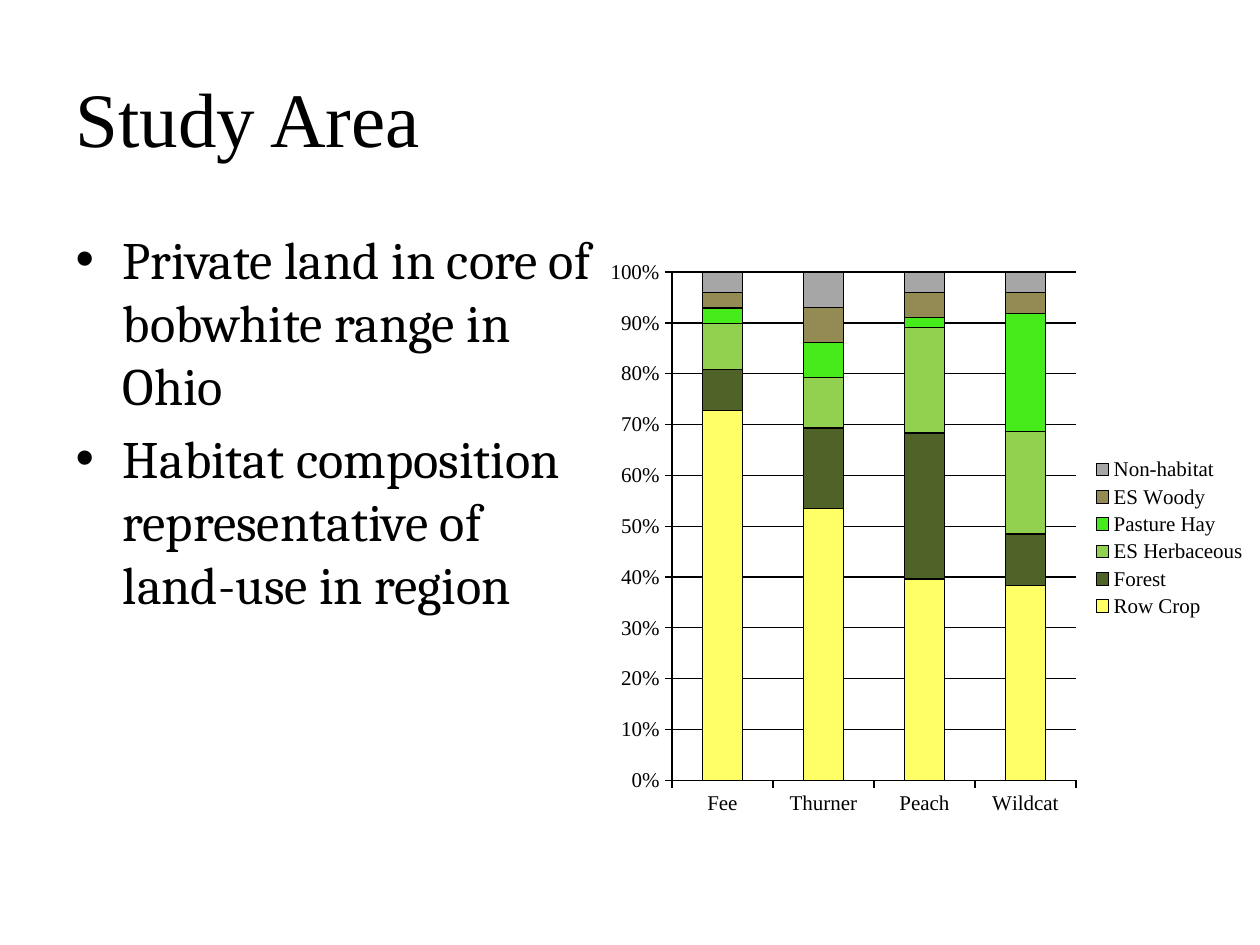
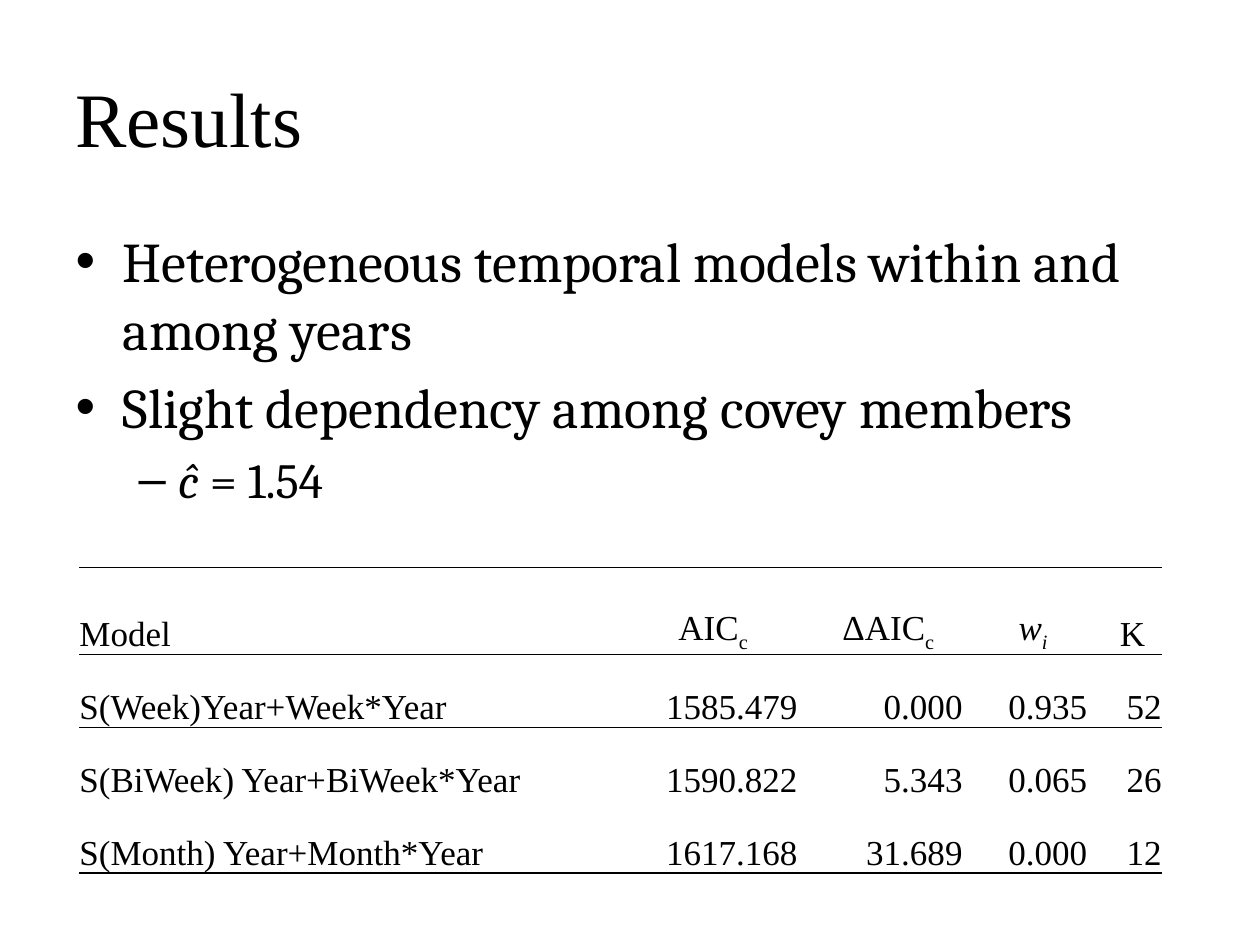
"""Build the study area and results slides."""
from typing import Any, NamedTuple

from lxml import etree
from pptx import Presentation
from pptx.chart.data import CategoryChartData
from pptx.dml.color import RGBColor
from pptx.enum.chart import XL_CHART_TYPE, XL_LEGEND_POSITION, XL_TICK_MARK
from pptx.enum.text import MSO_ANCHOR, MSO_AUTO_SIZE, PP_ALIGN
from pptx.oxml.ns import qn
from pptx.util import Pt

STACKED = XL_CHART_TYPE.COLUMN_STACKED_100
RIGHT_KEY = XL_LEGEND_POSITION.RIGHT
OUTSIDE = XL_TICK_MARK.OUTSIDE
BOTTOM, MIDDLE = MSO_ANCHOR.BOTTOM, MSO_ANCHOR.MIDDLE
NO_FIT = MSO_AUTO_SIZE.NONE
LEFT, CENTER, RIGHT = PP_ALIGN.LEFT, PP_ALIGN.CENTER, PP_ALIGN.RIGHT

SCALE = 9144
SERIF, BODY = "Times New Roman", "Cambria"
COLORS = {
    "ink": "000000",
    "crop": "FFFF66",
    "forest": "4F6228",
    "herb": "92D050",
    "hay": "47EA1A",
    "wood": "948A54",
    "none": "A6A6A6",
}
PLAIN_GRID = "{2D5ABB26-0587-4C30-8999-92F81FD0307C}"


class Box(NamedTuple):
    """A place on the slide in px, 100 to the inch."""
    left: int
    top: int
    width: int
    height: int


class Bit(NamedTuple):
    """A stretch of text with one look."""
    text: str
    slant: bool = False
    sub: bool = False


class Item(NamedTuple):
    """One list entry."""
    bits: list[Bit]
    size: int
    level: int = 0


class Land(NamedTuple):
    """One land cover series."""
    name: str
    color: str
    shares: list[int]


TITLE_BOX = Box(50, 30, 900, 125)
CHART_BOX = Box(474, 198, 526, 458)
TABLE_BOX = Box(63, 450, 859, 243)

SITES = ["Fee", "Thurner", "Peach", "Wildcat"]
LANDS = [
    Land("Row Crop", "crop", [72, 54, 40, 38]),
    Land("Forest", "forest", [8, 16, 29, 10]),
    Land("ES Herbaceous", "herb", [9, 10, 21, 20]),
    Land("Pasture Hay", "hay", [3, 7, 2, 23]),
    Land("ES Woody", "wood", [3, 7, 5, 4]),
    Land("Non-habitat", "none", [4, 7, 4, 4]),
]

GAP = 13
WIDTHS = [423, 134, 118, 86, 46]
HEIGHTS = [69, 58, 58, 58]
HEADS = [
    [Bit("Model")],
    [Bit("AIC"), Bit("c", sub=True)],
    [Bit("ΔAIC"), Bit("c", sub=True)],
    [Bit("w", slant=True), Bit("i", slant=True, sub=True)],
    [Bit("K")],
]
MODELS = [
    ["S(Week)Year+Week*Year", "1585.479", "0.000", "0.935", "52"],
    ["S(BiWeek) Year+BiWeek*Year", "1590.822", "5.343", "0.065", "26"],
    ["S(Month) Year+Month*Year", "1617.168", "31.689", "0.000", "12"],
]
RULES = [{"T": 0.5, "B": 0.5}, {"T": 0.5}, {}, {"B": 1}]


def emu(px: int) -> int:
    """Turn px into EMU."""
    return px * SCALE


def tint(key: str) -> RGBColor:
    """Look up a colour."""
    return RGBColor.from_string(COLORS[key])


def apply(target: Any, values: dict[str, Any]) -> None:
    """Set each named value on the target."""
    for name, value in values.items():
        setattr(target, name, value)


def place(shape: Any, box: Box) -> None:
    """Move a shape to a box."""
    apply(shape, {name: emu(px) for name, px in box._asdict().items()})


def ink(line: Any) -> None:
    """Draw a line thin and black."""
    line.color.rgb = tint("ink")
    line.width = Pt(0.75)


def write(para: Any, bits: list[Bit], face: str, size: int) -> None:
    """Fill a paragraph with styled runs."""
    for bit in bits:
        run = para.add_run()
        run.text = bit.text
        apply(run.font, {"name": face, "size": Pt(size), "italic": bit.slant})
        run.font.color.rgb = tint("ink")
        if bit.sub:
            run._r.get_or_add_rPr().set("baseline", "-25000")


def add_page(deck: Any, title: str, width: int, items: list[Item]) -> Any:
    """Add a slide with its title and list."""
    slide = deck.slides.add_slide(deck.slide_layouts[1])
    head, body = slide.placeholders
    place(head, TITLE_BOX)
    apply(head.text_frame, {"vertical_anchor": MIDDLE, "auto_size": NO_FIT})
    para = head.text_frame.paragraphs[0]
    para.alignment = LEFT
    write(para, [Bit(title)], SERIF, 44)

    place(body, Box(50, 175, width, 495))
    frame = body.text_frame
    frame.auto_size = NO_FIT
    for num, item in enumerate(items):
        para = frame.add_paragraph() if num else frame.paragraphs[0]
        para.level = item.level
        if not num:
            para.space_before = Pt(0)
        write(para, item.bits, BODY, item.size)
    return slide


def add_lands(slide: Any) -> None:
    """Chart the land cover of each site."""
    data = CategoryChartData()
    data.categories = SITES
    for land in LANDS:
        data.add_series(land.name, land.shares)
    spot = [emu(px) for px in CHART_BOX]
    chart = slide.shapes.add_chart(STACKED, *spot, data).chart
    apply(chart, {"has_title": False, "has_legend": True})
    apply(chart.legend, {"position": RIGHT_KEY, "include_in_layout": False})
    apply(chart.font, {"name": SERIF, "size": Pt(12)})
    chart.font.color.rgb = tint("ink")

    for axis in (chart.category_axis, chart.value_axis):
        axis.major_tick_mark = OUTSIDE
        ink(axis.format.line)
    scale = chart.value_axis
    apply(scale, {"minimum_scale": 0, "maximum_scale": 1,
                  "major_unit": 0.1, "has_major_gridlines": True})
    apply(scale.tick_labels, {"number_format": "0%",
                              "number_format_is_linked": False})
    ink(scale.major_gridlines.format.line)

    plot = chart.plots[0]
    apply(plot, {"gap_width": 150, "overlap": 100})
    for land, series in zip(LANDS, plot.series):
        series.format.fill.solid()
        series.format.fill.fore_color.rgb = tint(land.color)
        ink(series.format.line)


def rule(cell: Any, lines: dict[str, float]) -> None:
    """Draw the cell's top and bottom rules."""
    props = cell._tc.get_or_add_tcPr()
    for spot, (side, width) in enumerate(lines.items()):
        line = etree.Element(qn(f"a:ln{side}"), w=str(Pt(width)))
        fill = etree.SubElement(line, qn("a:solidFill"))
        etree.SubElement(fill, qn("a:srgbClr"), val=COLORS["ink"])
        props.insert(spot, line)


def add_models(slide: Any) -> None:
    """Set out the model table with narrow gap columns."""
    rows = [HEADS] + [[[Bit(text)] for text in row] for row in MODELS]
    spot = [emu(px) for px in TABLE_BOX]
    table = slide.shapes.add_table(len(rows), 2 * len(WIDTHS) - 1, *spot).table
    apply(table, {"first_row": False, "horz_banding": False})
    table._tbl.tblPr.find(qn("a:tableStyleId")).text = PLAIN_GRID
    for num, column in enumerate(table.columns):
        column.width = emu(GAP if num % 2 else WIDTHS[num // 2])

    for top, (row, height) in enumerate(zip(table.rows, HEIGHTS)):
        row.height = emu(height)
        for num, cell in enumerate(row.cells):
            apply(cell, {"margin_left": 0, "margin_right": 0, "margin_top": 0,
                         "margin_bottom": 0, "vertical_anchor": BOTTOM})
            cell.fill.background()
            rule(cell, RULES[top])
            if num % 2 == 0:
                para = cell.text_frame.paragraphs[0]
                side = RIGHT if top else CENTER
                para.alignment = side if num else LEFT
                write(para, rows[top][num // 2], SERIF, 20)


def main() -> None:
    """Build and save the deck."""
    deck = Presentation()
    apply(deck, {"slide_width": emu(1000), "slide_height": emu(750)})
    area = add_page(deck, "Study Area", 440, [
        Item([Bit("Private land in core of bobwhite range in Ohio")], 30),
        Item([Bit("Habitat composition representative of land-use in region")],
             30),
    ])
    add_lands(area)
    results = add_page(deck, "Results", 900, [
        Item([Bit("Heterogeneous temporal models within and among years")], 32),
        Item([Bit("Slight dependency among covey members")], 32),
        Item([Bit("ĉ ", slant=True), Bit("= 1.54")], 28, 1),
    ])
    add_models(results)
    deck.save("out.pptx")


if __name__ == "__main__":
    main()
